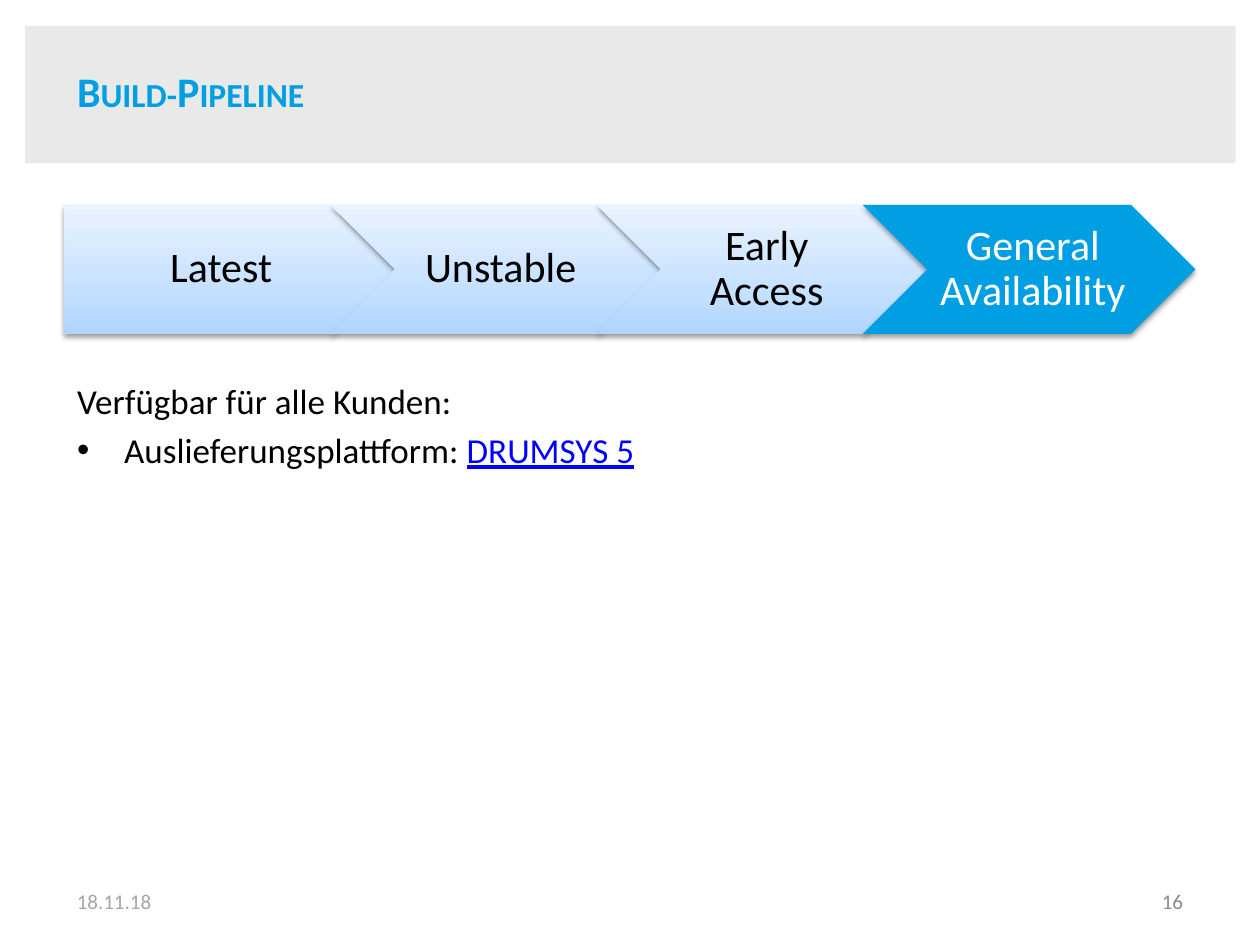
from dataclasses import dataclass

from lxml import etree
from pptx import Presentation
from pptx.dml.color import RGBColor
from pptx.enum.shapes import MSO_SHAPE
from pptx.enum.text import MSO_ANCHOR, PP_ALIGN
from pptx.oxml import parse_xml
from pptx.oxml.ns import nsdecls, qn
from pptx.util import Cm, Pt

RECTANGLE, PENTAGON, CHEVRON = MSO_SHAPE.RECTANGLE, MSO_SHAPE.PENTAGON, MSO_SHAPE.CHEVRON
LEFT, CENTER, RIGHT = PP_ALIGN.LEFT, PP_ALIGN.CENTER, PP_ALIGN.RIGHT
MIDDLE = MSO_ANCHOR.MIDDLE


@dataclass(frozen=True)
class Theme:
    font: str = "Calibri"
    accent: str = "009EE2"
    banner: str = "E9E9EA"
    text: str = "000000"
    inverse: str = "FFFFFF"
    link: str = "0000FF"
    date: str = "A6A6A6"
    number: str = "8C8C8C"
    stage_gradient: tuple = ((0, "AFD5FF"), (35, "C6E1FF"), (100, "EAF3FF"))
    heading_size: int = 24
    body_size: int = 20
    footer_size: int = 12


THEME = Theme()


def place(shape, left, top, width, height):
    shape.left, shape.top = Cm(left), Cm(top)
    shape.width, shape.height = Cm(width), Cm(height)


def add_run(paragraph, wording, size, color):
    run = paragraph.add_run()
    run.text = wording
    run.font.name = THEME.font
    run.font.size = Pt(size)
    run.font.color.rgb = RGBColor.from_string(color)
    return run


def fill_solid(shape, color):
    shape.fill.solid()
    shape.fill.fore_color.rgb = RGBColor.from_string(color)


def fill_gradient(shape, stops):
    marks = "".join(
        f'<a:gs pos="{pos * 1000}"><a:srgbClr val="{color}"/></a:gs>' for pos, color in stops
    )
    gradient = parse_xml(
        f'<a:gradFill {nsdecls("a")} rotWithShape="1"><a:gsLst>{marks}</a:gsLst>'
        '<a:lin ang="16200000" scaled="0"/></a:gradFill>'
    )
    shape._element.spPr.find(qn("a:prstGeom")).addnext(gradient)


def add_shadow(shape):
    shape.shadow.inherit = False
    effects = shape._element.spPr.find(qn("a:effectLst"))
    outer = etree.SubElement(
        effects, qn("a:outerShdw"), blurRad="40000", dist="20000", dir="5400000", rotWithShape="0"
    )
    color = etree.SubElement(outer, qn("a:srgbClr"), val="000000")
    etree.SubElement(color, qn("a:alpha"), val="38000")


def add_header(slide, wording, left, top, width, height):
    banner = slide.shapes.add_shape(RECTANGLE, Cm(left), Cm(top), Cm(width), Cm(height))
    banner.shadow.inherit = False
    fill_solid(banner, THEME.banner)
    banner.line.fill.background()
    tree = slide.shapes._spTree
    tree.remove(banner._element)
    tree.insert(2, banner._element)

    title = slide.shapes.title
    place(title, left + 0.79, top + 0.2, 17.4, 2.21)
    title.text_frame.vertical_anchor = MIDDLE
    heading = title.text_frame.paragraphs[0]
    heading.alignment = LEFT
    run = add_run(heading, wording, THEME.heading_size, THEME.accent)
    run.font.bold = True
    run.font._element.set("cap", "small")


def add_pipeline(slide, stages, active, left, top, width, height):
    overlap = 0.2
    stage_width = width / (len(stages) - overlap * (len(stages) - 1))
    step = stage_width * (1 - overlap)
    for index, stage in enumerate(stages):
        arrow = slide.shapes.add_shape(
            CHEVRON if index else PENTAGON,
            Cm(left + index * step), Cm(top), Cm(stage_width), Cm(height),
        )
        if stage == active:
            fill_solid(arrow, THEME.accent)
        else:
            fill_gradient(arrow, THEME.stage_gradient)
        arrow.line.fill.background()
        add_shadow(arrow)
        frame = arrow.text_frame
        frame.word_wrap = True
        frame.vertical_anchor = MIDDLE
        frame.margin_left = Cm(0.25 if index else 0.36)
        frame.margin_right = Cm(0.1)
        frame.margin_top = frame.margin_bottom = Cm(0.18)
        label = frame.paragraphs[0]
        label.alignment = CENTER
        label.line_spacing = 0.9
        add_run(label, stage, THEME.heading_size, THEME.inverse if stage == active else THEME.text)


def add_availability(slide, left, top, width, height):
    body = slide.placeholders[1]
    place(body, left, top, width, height)
    intro = body.text_frame.paragraphs[0]
    delivery = body.text_frame.add_paragraph()
    for paragraph, bullet in ((intro, None), (delivery, "•")):
        properties = paragraph._p.get_or_add_pPr()
        properties.set("marL", str(Cm(0.95)))
        properties.set("indent", str(-Cm(0.95)))
        if bullet:
            etree.SubElement(properties, qn("a:buFont"), typeface="Arial")
            etree.SubElement(properties, qn("a:buChar"), char=bullet)
        else:
            etree.SubElement(properties, qn("a:buNone"))
    intro.space_before = Pt(0)
    add_run(intro, "Verfügbar für alle Kunden:", THEME.body_size, THEME.text)
    add_run(delivery, "Auslieferungsplattform: ", THEME.body_size, THEME.text)
    product = add_run(delivery, "DRUMSYS 5", THEME.body_size, THEME.link)
    product.font.underline = True


def add_footer(slide, date, number, left, top, width, height):
    part_width = 5.9
    for wording, color, alignment, offset in (
        (date, THEME.date, LEFT, 0),
        (number, THEME.number, RIGHT, width - part_width),
    ):
        part = slide.shapes.add_textbox(Cm(left + offset), Cm(top), Cm(part_width), Cm(height))
        part.text_frame.word_wrap = True
        part.text_frame.vertical_anchor = MIDDLE
        paragraph = part.text_frame.paragraphs[0]
        paragraph.alignment = alignment
        add_run(paragraph, wording, THEME.footer_size, color)


def main():
    presentation = Presentation()
    presentation.slide_width, presentation.slide_height = Cm(25.4), Cm(19.05)
    slide = presentation.slides.add_slide(presentation.slide_layouts[1])
    margin, content_width = 1.3, 22.8
    stages = ("Latest", "Unstable", "Early Access", "General Availability")
    add_header(slide, "Build-Pipeline", 0.51, 0.53, 24.4, 2.76)
    add_availability(slide, margin, 7.52, content_width, 9)
    add_footer(slide, "18.11.18", "16", margin, 17.65, content_width, 1.02)
    add_pipeline(slide, stages, stages[-1], margin, 4.13, content_width, 2.6)
    presentation.save("out.pptx")


if __name__ == "__main__":
    main()
